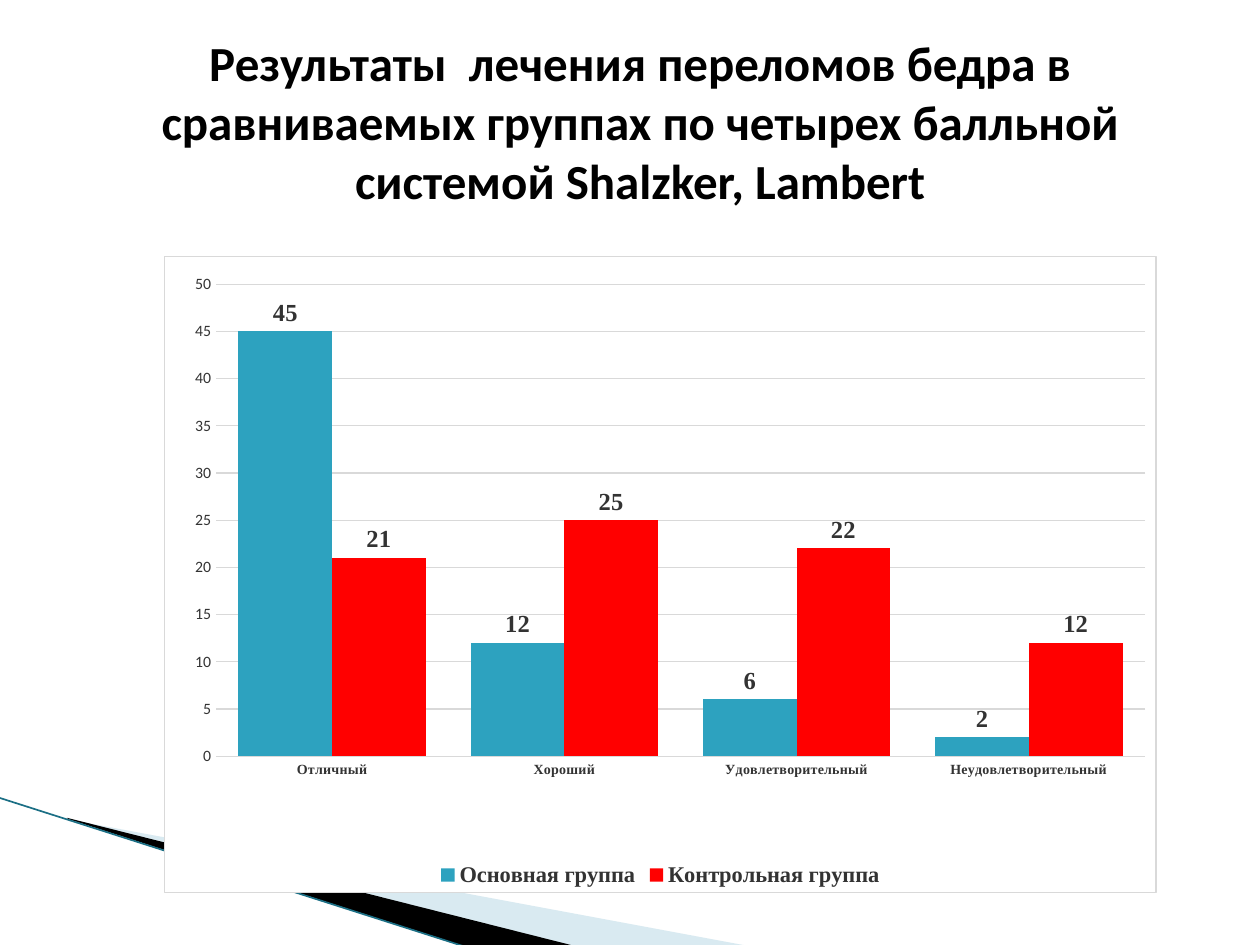
"""Slide comparing femur fracture treatment results in two patient groups."""
from lxml import etree
from pptx import Presentation, util as u
from pptx.chart.data import CategoryChartData
from pptx.dml.color import RGBColor
from pptx.enum import chart as ch, shapes, text
from pptx.oxml import parse_xml
from pptx.oxml.ns import nsdecls, qn

TITLE = ("Результаты  лечения переломов бедра в сравниваемых группах "
         "по четырех балльной системой Shalzker, Lambert")
RATINGS = ["Отличный", "Хороший", "Удовлетворительный", "Неудовлетворительный"]
GROUPS = [
    ("Основная группа", (45, 12, 6, 2), "main"),
    ("Контрольная группа", (21, 25, 22, 12), "control"),
]
COLORS = {"main": "2DA2BF", "control": "FF0000", "label": "333333",
          "grid": "D9D9D9", "black": "000000", "white": "FFFFFF",
          "wedge": "A0CBDC", "edge": "1B6F85"}
WEDGES = [
    ("wedge", 40, (56.2, 393.8, 299.5, 113.8),
     [(39.6, 468.4), (428.4, 540.7), (328.3, 540.7), (39.6, 468)]),
    ("black", 100, (-4.3, 455.8, 299.5, 66.2),
     [(38.2, 467.3), (329, 540.7), (267.8, 541.4), (38.9, 468)]),
]
EDGE = (-0.7, 455.8, 267.1, 541.4)
TITLE_BOX = (48.2, 15.1, 635, 108.7)
CHART_BOX = (93.6, 146.1, 567.4, 364.3)
PLOT_BOX = (29.5, 16, 531.6, 270.3)
SERIF, SANS = "Times New Roman", "Calibri"


def rgb(name):
    return RGBColor.from_string(COLORS[name])


def pts(values):
    return [u.Pt(v) for v in values]


def set_font(font, name, size, color="label", bold=True):
    font.name, font.size, font.bold = name, u.Pt(size), bold
    font.color.rgb = rgb(color)


def set_frame(sp, box):
    left, top, width, height = pts(box)
    dx, dy = sp.left - left, sp.top - top
    path = sp._element.spPr.find(".//" + qn("a:path"))
    path.set("w", str(width))
    path.set("h", str(height))
    for pt in path.iter(qn("a:pt")):
        pt.set("x", str(int(pt.get("x")) + dx))
        pt.set("y", str(int(pt.get("y")) + dy))
    sp.left, sp.top, sp.width, sp.height = left, top, width, height


def add_wedge(s, color, opacity, box, points):
    start, *rest = [pts(p) for p in points]
    fb = s.shapes.build_freeform(*start)
    fb.add_line_segments(rest, close=True)
    sp = fb.convert_to_shape()
    set_frame(sp, box)
    sp.shadow.inherit = False
    sp.fill.solid()
    sp.fill.fore_color.rgb = rgb(color)
    sp.line.fill.background()
    if opacity < 100:
        clr = sp._element.spPr.find(".//" + qn("a:srgbClr"))
        etree.SubElement(clr, qn("a:alpha"), val=str(opacity * 1000))


def add_edge(s):
    line = s.shapes.add_connector(shapes.MSO_CONNECTOR.STRAIGHT, *pts(EDGE))
    line.line.color.rgb = rgb("edge")
    line.line.width = u.Pt(0.95)
    etree.SubElement(line._element.spPr, qn("a:effectLst"))


def add_title(s):
    tf = s.shapes.add_textbox(*pts(TITLE_BOX)).text_frame
    tf.word_wrap = True
    p = tf.paragraphs[0]
    p.alignment = text.PP_ALIGN.CENTER
    r = p.add_run()
    r.text = TITLE
    set_font(r.font, SANS, 28, "black")


def frame_chart(chart):
    space = chart._chartSpace
    space.find(qn("c:chart")).addnext(parse_xml(
        f'<c:spPr {nsdecls("c", "a")}><a:solidFill><a:srgbClr val="{COLORS["white"]}"/></a:solidFill>'
        f'<a:ln w="9525"><a:solidFill><a:srgbClr val="{COLORS["grid"]}"/></a:solidFill></a:ln></c:spPr>'))
    area = space.find(".//" + qn("c:plotArea"))
    for old in area.findall(qn("c:layout")):
        area.remove(old)
    sizes = "".join(f'<c:{k} val="{part / whole}"/>' for k, part, whole
                    in zip("xywh", PLOT_BOX, CHART_BOX[2:] * 2))
    area.insert(0, parse_xml(
        f'<c:layout {nsdecls("c")}><c:manualLayout><c:layoutTarget val="inner"/>'
        f'<c:xMode val="edge"/><c:yMode val="edge"/>{sizes}</c:manualLayout></c:layout>'))


def add_results(s):
    data = CategoryChartData()
    data.categories = RATINGS
    for name, values, _ in GROUPS:
        data.add_series(name, values)
    chart = s.shapes.add_chart(ch.XL_CHART_TYPE.COLUMN_CLUSTERED,
                               *pts(CHART_BOX), data).chart
    set_font(chart.font, SANS, 10, "black", False)
    chart.has_title = False
    chart.has_legend = True
    chart.legend.position = ch.XL_LEGEND_POSITION.BOTTOM
    chart.legend.include_in_layout = False
    set_font(chart.legend.font, SERIF, 12.8)

    for axis in (chart.category_axis, chart.value_axis):
        axis.major_tick_mark = axis.minor_tick_mark = ch.XL_TICK_MARK.NONE
        axis.format.line.fill.background()
    set_font(chart.category_axis.tick_labels.font, SERIF, 8)
    value_axis = chart.value_axis
    set_font(value_axis.tick_labels.font, SANS, 9, bold=False)
    value_axis.minimum_scale, value_axis.maximum_scale = 0, 50
    value_axis.major_unit = 5
    grid = value_axis.major_gridlines.format.line
    grid.color.rgb = rgb("grid")
    grid.width = u.Pt(0.75)

    plot = chart.plots[0]
    plot.gap_width, plot.overlap = 48, 0
    plot.vary_by_categories = False
    for series, (_, _, color) in zip(plot.series, GROUPS):
        series.format.fill.solid()
        series.format.fill.fore_color.rgb = rgb(color)
        labels = series.data_labels
        labels.show_value = True
        labels.position = ch.XL_LABEL_POSITION.OUTSIDE_END
        set_font(labels.font, SERIF, 14)
    frame_chart(chart)


def main():
    prs = Presentation()
    prs.slide_width, prs.slide_height = pts((720, 540))
    s = prs.slides.add_slide(prs.slide_layouts[6])
    for wedge in WEDGES:
        add_wedge(s, *wedge)
    add_edge(s)
    add_title(s)
    add_results(s)
    prs.save("out.pptx")


if __name__ == "__main__":
    main()
